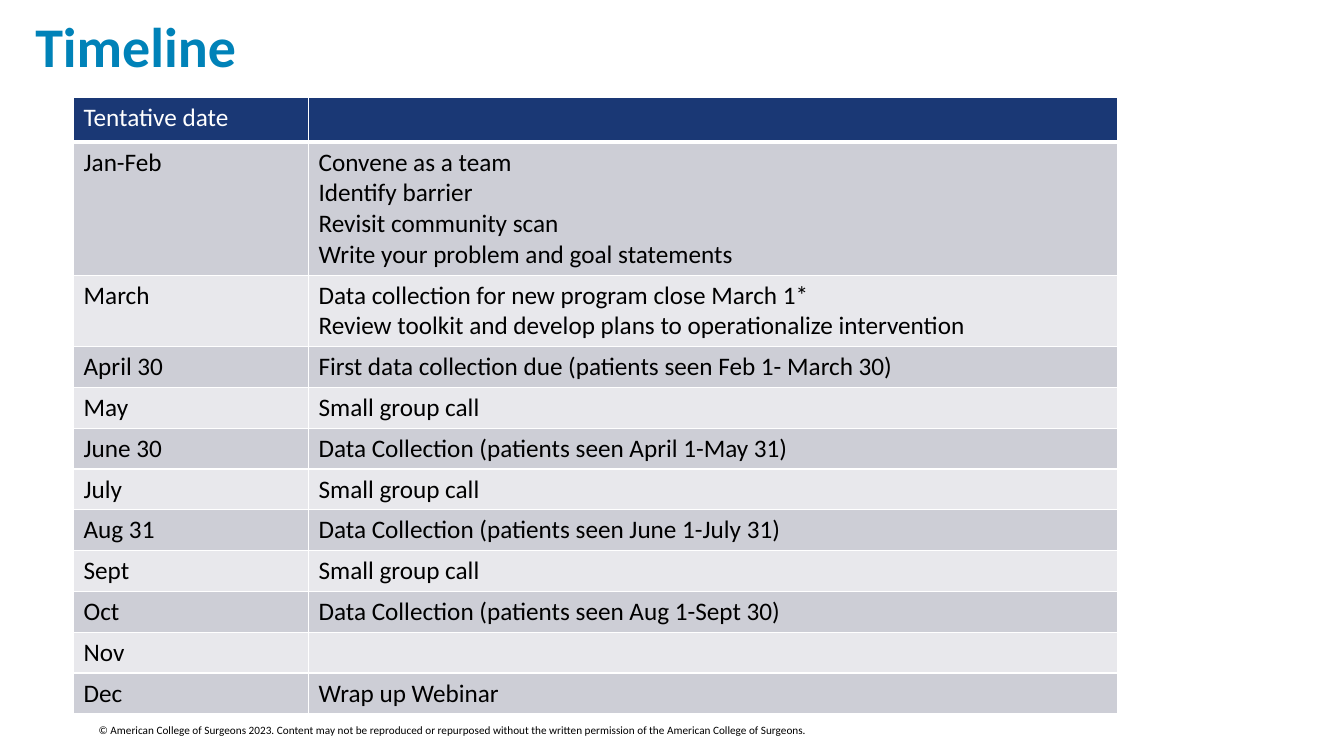
import pptx
import pptx.util
import pptx.dml.color
import pptx.enum.text
import pptx.oxml
import pptx.oxml.ns

Inches = pptx.util.Inches
FONT = "Calibri"
HUES = {"title": "0082B8", "head": "1A3875", "dark": "CDCED6",
        "light": "E8E8EC", "white": "FFFFFF", "black": "000000"}
GROUP = "Small group call"
ROWS = [
    ("Tentative date", []),
    ("Jan-Feb", ["Convene as a team", "Identify barrier", "Revisit community scan",
                 "Write your problem and goal statements"]),
    ("March", ["Data collection for new program close March 1*",
               "Review toolkit and develop plans to operationalize intervention"]),
    ("April 30", ["First data collection due (patients seen Feb 1- March 30)"]),
    ("May", [GROUP]),
    ("June 30", ["Data Collection (patients seen April 1-May 31)"]),
    ("July", [GROUP]),
    ("Aug 31", ["Data Collection (patients seen June 1-July 31)"]),
    ("Sept", [GROUP]),
    ("Oct", ["Data Collection (patients seen Aug 1-Sept 30)"]),
    ("Nov", []),
    ("Dec", ["Wrap up Webinar"]),
]
NOTICE = ("© American College of Surgeons 2023. Content may not be reproduced or "
          "repurposed without the written permission of the American College of Surgeons.")


def color(name):
    return pptx.dml.color.RGBColor.from_string(HUES[name])


def write(frame, lines, size, hue, bold=False):
    for num, line in enumerate(lines):
        para = frame.add_paragraph() if num else frame.paragraphs[0]
        run = para.add_run()
        run.text = line
        run.font.name = FONT
        run.font.size = pptx.util.Pt(size)
        run.font.bold = bold
        run.font.color.rgb = color(hue)


def border(cell, base):
    props = cell._tc.get_or_add_tcPr()
    sides = (("L", 1), ("R", 1), ("T", 1), ("B", base))
    for num, (side, width) in enumerate(sides):
        line = pptx.oxml.parse_xml(
            f'<a:ln{side} {pptx.oxml.ns.nsdecls("a")} w="{pptx.util.Pt(width)}">'
            f'<a:solidFill><a:srgbClr val="{HUES["white"]}"/></a:solidFill></a:ln{side}>')
        props.insert(num, line)


def add_title(slide, left, top, width, height):
    title = slide.shapes.title
    title.left, title.top = Inches(left), Inches(top)
    title.width, title.height = Inches(width), Inches(height)
    frame = title.text_frame
    frame.vertical_anchor = pptx.enum.text.MSO_ANCHOR.MIDDLE
    write(frame, ["Timeline"], 40, "title", True)
    para = frame.paragraphs[0]
    para.alignment = pptx.enum.text.PP_ALIGN.LEFT
    para.line_spacing = 0.9


def add_plan(slide, left, top, width, height):
    dates = 2.33
    table = slide.shapes.add_table(len(ROWS), 2, Inches(left), Inches(top),
                                   Inches(width), Inches(height)).table
    table.columns[0].width = Inches(dates)
    table.columns[1].width = Inches(width - dates)
    for num, (date, tasks) in enumerate(ROWS):
        head = num == 0
        tall = 0.44 if head else 0.1 + 0.305 * max(1, len(tasks))
        table.rows[num].height = Inches(tall)
        fill = "head" if head else ("light", "dark")[num % 2]
        for col, lines in enumerate(([date], tasks)):
            cell = table.cell(num, col)
            cell.fill.solid()
            cell.fill.fore_color.rgb = color(fill)
            border(cell, 3 if head else 1)
            write(cell.text_frame, lines, 18, "white" if head else "black")


def add_notice(slide, left, top, width, height):
    box = slide.shapes.add_textbox(Inches(left), Inches(top), Inches(width), Inches(height))
    box.text_frame.word_wrap = True
    write(box.text_frame, [NOTICE], 8, "black")


def main():
    deck = pptx.Presentation()
    deck.slide_width, deck.slide_height = Inches(13.33), Inches(7.5)
    slide = deck.slides.add_slide(deck.slide_layouts[5])
    add_notice(slide, 0.88, 7.13, 11.5, 0.24)
    add_title(slide, 0.25, 0, 11.5, 0.97)
    add_plan(slide, 0.73, 0.97, 10.35, 6.11)
    deck.save("out.pptx")


if __name__ == "__main__":
    main()
